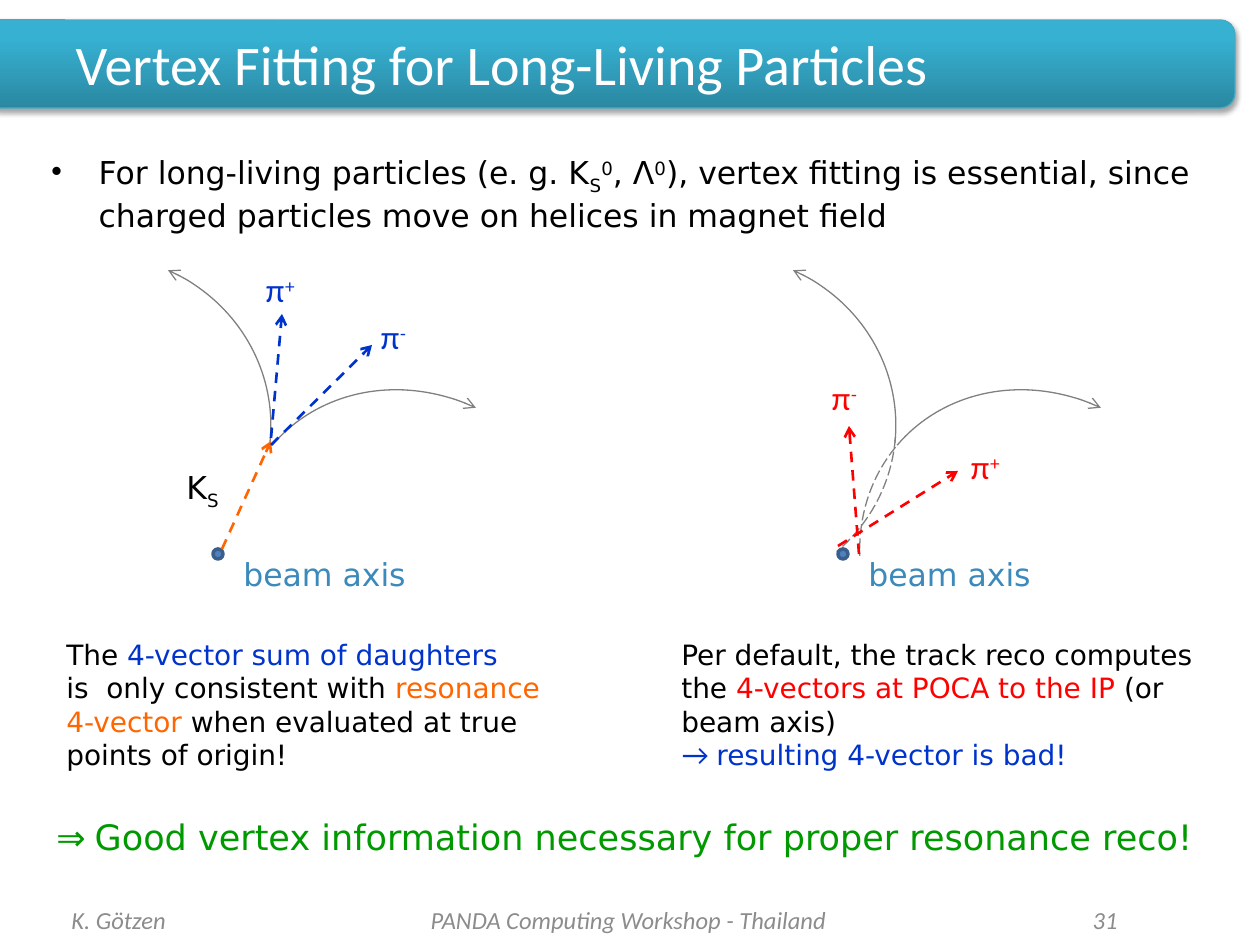
from typing import NamedTuple, Optional

from lxml import etree
from pptx import Presentation
from pptx import util as u
from pptx.dml.color import RGBColor
from pptx.enum import dml, shapes, text
from pptx.oxml import parse_xml
from pptx.oxml.ns import nsdecls, qn

PX = 914400 / 126
BODY_FONT, SYMBOL_FONT, TITLE_FONT = "DejaVu Sans", "Lato", "Calibri"
BLACK, WHITE, GREY, TRACK_GREY = "000000", "FFFFFF", "8C8C8C", "808080"
BLUE, ORANGE, RED, GREEN, BEAM_BLUE = "0033CC", "FF6600", "FF0000", "009900", "3B8ABB"
SUB, SUPER = -25000, 30000
RIGHT_DIAGRAM = 625


class Run(NamedTuple):
    text: str
    color: Optional[str] = None
    baseline: int = 0
    font: Optional[str] = None


class Arc(NamedTuple):
    box: tuple
    rotation: float
    flipped: bool
    track: tuple
    backward: tuple


class Vector(NamedTuple):
    start: tuple
    end: tuple
    color: str


class Label(NamedTuple):
    box: tuple
    runs: list
    color: str
    font: str = BODY_FONT


# Angles in degrees: the measured track, and its extrapolation to the beam axis
ARCS = [
    Arc((-78, 255, 349, 338), 6.2, False, (288.76, 0), (358.29, 41.71)),
    Arc((227, 398, 373, 338), 42.7, True, (291.28, 1.9), (2.72, 39.11)),
]
PI_PLUS = [Run("π"), Run("+", baseline=SUPER)]
PI_MINUS = [Run("π"), Run("-", baseline=SUPER)]

TRUE_VECTORS = [
    Vector((222, 549), (271, 441), ORANGE),
    Vector((271, 438), (282, 314), BLUE),
    Vector((271, 445), (372, 345), BLUE),
]
TRUE_LABELS = [
    Label((174, 462, 62, 50), [Run("K"), Run("S", baseline=SUB)], BLACK),
    Label((253, 265, 63, 50), PI_PLUS, BLUE, SYMBOL_FONT),
    Label((368, 312, 53, 50), PI_MINUS, BLUE, SYMBOL_FONT),
]
POCA_VECTORS = [
    Vector((838, 546), (958, 471), RED),
    Vector((859, 554), (849, 426), RED),
]
POCA_LABELS = [
    Label((958, 442, 63, 50), PI_PLUS, RED, SYMBOL_FONT),
    Label((819, 373, 53, 50), PI_MINUS, RED, SYMBOL_FONT),
]


def px(*lengths: int) -> list:
    return [u.Emu(round(length * PX)) for length in lengths]


def rgb(value: str) -> RGBColor:
    return RGBColor.from_string(value)


def write(frame, paragraphs: list, *, size: int, color: str = BLACK, font: str = BODY_FONT,
          italic: bool = False, align=text.PP_ALIGN.LEFT, anchor=text.MSO_ANCHOR.TOP,
          wrap: bool = False, bullet: bool = False) -> None:
    """Fill a text frame; each paragraph is a list of runs."""
    frame.word_wrap = wrap
    frame.auto_size = text.MSO_AUTO_SIZE.NONE if wrap else text.MSO_AUTO_SIZE.SHAPE_TO_FIT_TEXT
    frame.vertical_anchor = anchor
    for index, runs in enumerate(paragraphs):
        paragraph = frame.add_paragraph() if index else frame.paragraphs[0]
        paragraph.alignment = align
        if bullet:
            properties = paragraph._p.get_or_add_pPr()
            properties.set("marL", "342900")
            properties.set("indent", "-342900")
            etree.SubElement(properties, qn("a:buChar"), char="•")
        for part in runs:
            run = paragraph.add_run()
            run.text = part.text
            run.font.size = u.Pt(size)
            run.font.name = part.font or font
            run.font.italic = italic
            run.font.color.rgb = rgb(part.color or color)
            if part.baseline:
                run._r.get_or_add_rPr().set("baseline", str(part.baseline))


def add_text(parent, box: tuple, paragraphs: list, **style) -> None:
    write(parent.shapes.add_textbox(*px(*box)).text_frame, paragraphs, **style)


def style_line(line, color: str, width: float, dash=None, arrow: Optional[str] = None) -> None:
    """Format a line; arrow is the end that gets a head, headEnd or tailEnd."""
    line.color.rgb = rgb(color)
    line.width = u.Pt(width)
    if dash:
        line.dash_style = dash
    if arrow:
        etree.SubElement(line._get_or_add_ln(), qn(f"a:{arrow}"), type="arrow")


def add_arc(parent, arc: Arc, offset: int, angles: tuple, **line_style) -> None:
    left, *rest = arc.box
    curve = parent.shapes.add_shape(shapes.MSO_SHAPE.ARC, *px(left + offset, *rest))
    curve.shadow.inherit = False
    curve.fill.background()
    curve.rotation = arc.rotation
    if arc.flipped:
        curve._element.spPr.xfrm.set("flipH", "1")
    for index, angle in enumerate(angles):
        curve.adjustments[index] = angle * 0.6  # 60000 units per degree, scaled by 100000
    style_line(curve.line, TRACK_GREY, 0.75, **line_style)


def add_tracks(parent, offset: int) -> None:
    for arc in ARCS:
        add_arc(parent, arc, offset, arc.track, arrow="headEnd")


def add_beam_axis(parent, offset: int) -> None:
    point = parent.shapes.add_shape(shapes.MSO_SHAPE.OVAL, *px(213 + offset, 549, 10, 10))
    point.shadow.inherit = False
    point.fill.solid()
    point.fill.fore_color.rgb = rgb("4F81BD")
    style_line(point.line, "3A5F8C", 2)
    add_text(parent, (231 + offset, 549, 189, 50), [[Run("beam axis")]], size=18, color=BEAM_BLUE)


def add_momenta(parent, vectors: list, labels: list) -> None:
    for vector in vectors:
        arrow = parent.shapes.add_connector(
            shapes.MSO_CONNECTOR.STRAIGHT, *px(*vector.start, *vector.end))
        style_line(arrow.line, vector.color, 1.5, dml.MSO_LINE.DASH, "tailEnd")
        etree.SubElement(arrow._element.spPr, qn("a:effectLst"))
    for label in labels:
        add_text(parent, label.box, [label.runs], size=18, color=label.color, font=label.font)


def add_header(slide) -> None:
    banner = slide.shapes.add_shape(shapes.MSO_SHAPE.ROUNDED_RECTANGLE, *px(-15, 20, 1250, 88))
    banner.fill.gradient()
    banner.fill.gradient_angle = 90
    for stop, position, color in zip(banner.fill.gradient_stops, (0, 0.8), ("2A88A2", "37B1D2")):
        stop.position = position
        stop.color.rgb = rgb(color)
    style_line(banner.line, "46AAC5", 0.75)
    banner.shadow.inherit = False
    banner._element.spPr.find(qn("a:effectLst")).append(parse_xml(
        f'<a:outerShdw {nsdecls("a")} blurRad="39370" dist="22860" dir="5400000" rotWithShape="0">'
        '<a:srgbClr val="000000"><a:alpha val="35000"/></a:srgbClr></a:outerShdw>'))
    slide.shapes._spTree.insert(2, banner._element)  # behind the title

    title = slide.shapes.title
    title.left, title.top, title.width, title.height = px(63, 23, 1134, 81)
    write(title.text_frame, [[Run("Vertex Fitting for Long-Living Particles")]], size=32,
          color=WHITE, font=TITLE_FONT, anchor=text.MSO_ANCHOR.MIDDLE, wrap=True)


def main() -> None:
    deck = Presentation()
    deck.slide_width, deck.slide_height = px(1260, 945)
    slide = deck.slides.add_slide(deck.slide_layouts[5])
    add_header(slide)
    add_text(slide, (39, 147, 1182, 728), [[
        Run("For long-living particles (e. g. K"), Run("S", baseline=SUB), Run("0", baseline=SUPER),
        Run(", Λ"), Run("0", baseline=SUPER),
        Run("), vertex fitting is essential, since charged particles move on helices in magnet field"),
    ]], size=18, wrap=True, bullet=True)

    true_origin = slide.shapes.add_group_shape()
    add_tracks(true_origin, 0)
    add_beam_axis(true_origin, 0)
    add_momenta(true_origin, TRUE_VECTORS, TRUE_LABELS)
    add_text(slide, (54, 631, 507, 149), [
        [Run("The "), Run("4-vector sum of daughters", BLUE)],
        [Run("is  only consistent with "), Run("resonance", ORANGE)],
        [Run("4-vector", ORANGE), Run(" when evaluated at true")],
        [Run("points of origin!")],
    ], size=16)

    for arc in ARCS:
        add_arc(slide, arc, RIGHT_DIAGRAM, arc.backward, dash=dml.MSO_LINE.LONG_DASH)
    add_beam_axis(slide, RIGHT_DIAGRAM)
    add_momenta(slide.shapes.add_group_shape(), POCA_VECTORS, POCA_LABELS)
    add_tracks(slide, RIGHT_DIAGRAM)
    add_text(slide, (669, 631, 544, 149), [
        [Run("Per default, the track reco computes")],
        [Run("the "), Run("4-vectors at POCA to the IP ", RED), Run("(or")],
        [Run("beam axis)")],
        [Run("→ ", BLUE, font=SYMBOL_FONT), Run("resulting 4-vector is bad!", BLUE)],
    ], size=16)

    add_text(slide, (44, 809, 1187, 55), [[
        Run("⇒ ", font=SYMBOL_FONT),
        Run("Good vertex information necessary for proper resonance reco!"),
    ]], size=20, color=GREEN)

    for left, width, footer, align in [
        (59, 294, "K. Götzen", text.PP_ALIGN.LEFT),
        (382, 493, "PANDA Computing Workshop - Thailand", text.PP_ALIGN.CENTER),
        (945, 185, "31", text.PP_ALIGN.RIGHT),
    ]:
        add_text(slide, (left, 895, width, 50), [[Run(footer)]], size=14, color=GREY, wrap=True,
                 font=TITLE_FONT, italic=True, align=align, anchor=text.MSO_ANCHOR.MIDDLE)
    deck.save("out.pptx")


if __name__ == "__main__":
    main()
